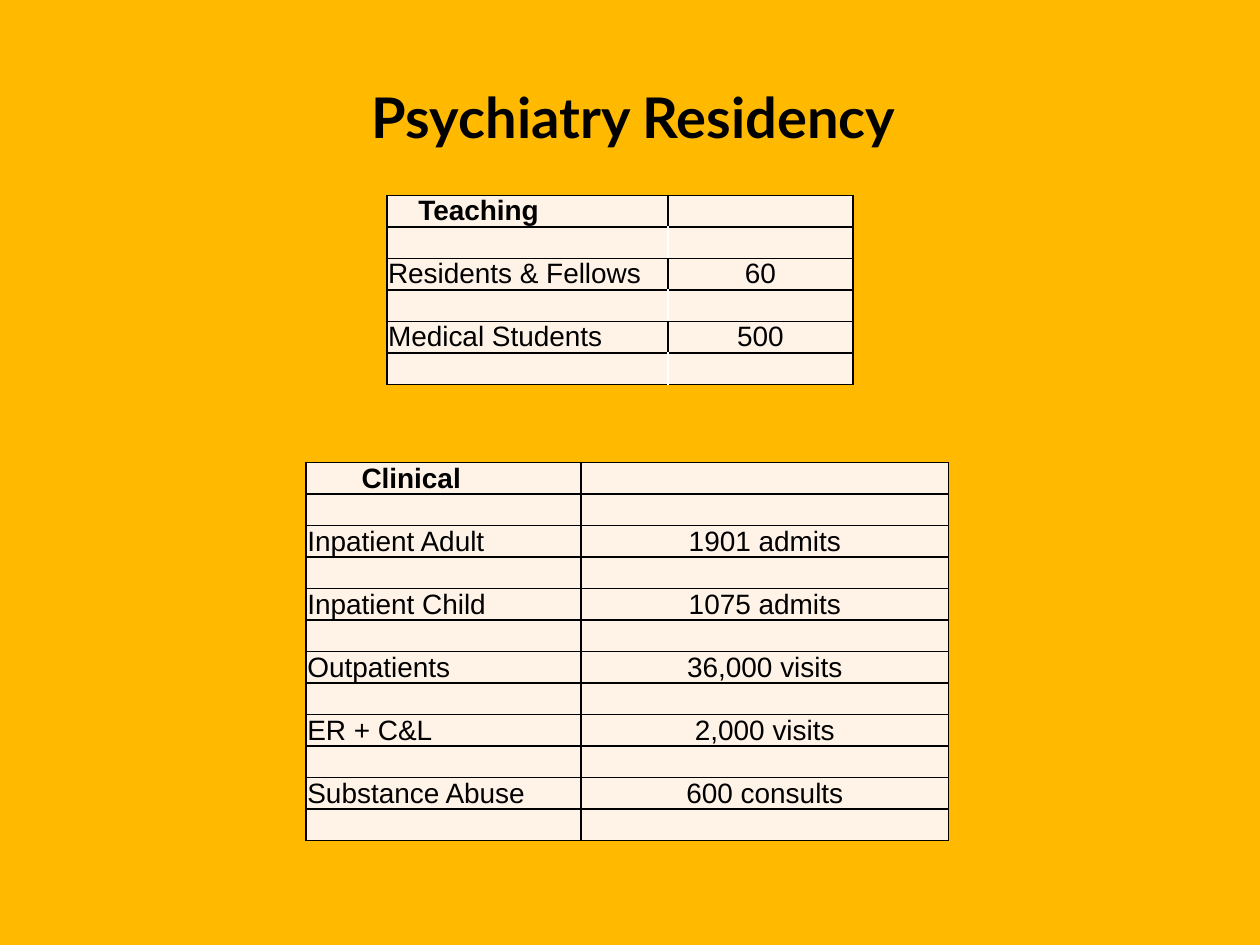
from lxml.etree import SubElement as Sub
from pptx import Presentation
from pptx.dml.color import RGBColor as RGB
from pptx.enum.text import MSO_ANCHOR as Anchor, PP_ALIGN as Align
from pptx.oxml.ns import qn
from pptx.util import Inches, Pt

GOLD = RGB(0xFF, 0xBA, 0x00)
CREAM = RGB(0xFF, 0xF3, 0xE7)
BLACK = RGB(0, 0, 0)
WHITE = RGB(0xFF, 0xFF, 0xFF)

TITLE = "Psychiatry Residency"
TABLES = [
    dict(head="Teaching", indent=0.25, at=(3.07, 1.55), cols=(2.23, 1.47), gap=WHITE,
         rows=[("Residents & Fellows", "60"), ("Medical Students", "500")]),
    dict(head="Clinical", indent=0.44, at=(2.43, 3.67), cols=(2.18, 2.92), gap=BLACK,
         rows=[("Inpatient Adult", "1901 admits"), ("Inpatient Child", "1075 admits"),
               ("Outpatients", "36,000 visits"), ("ER + C&L", "2,000 visits"),
               ("Substance Abuse", "600 consults")]),
]
ROW = 0.25
PAD = 0.01
HEAD = dict(name="Lato", size=Pt(32), bold=True)
BODY = dict(name="Arial", size=Pt(16), bold=False)


def style(font, look):
    for key, value in look.items():
        setattr(font, key, value)
    font.color.rgb = BLACK


def border(cell, hues):
    props = cell._tc.get_or_add_tcPr()
    for side, hue in zip("LRTB", hues):
        line = Sub(props, qn(f"a:ln{side}"), w=str(Pt(1)))
        fill = Sub(line, qn("a:solidFill"))
        Sub(fill, qn("a:srgbClr"), val=str(hue))


def write(cell, text, look, align):
    para = cell.text_frame.paragraphs[0]
    para.alignment = align
    if text:
        run = para.add_run()
        run.text = text
        style(run.font, look)
    else:
        para._p.get_or_add_endParaRPr().set("sz", "1400")


def draw(slide, data):
    pairs = [(data["head"], "")] + data["rows"]
    lines = [line for pair in pairs for line in (pair, ("", ""))]
    left, top = data["at"]
    frame = slide.shapes.add_table(
        len(lines), 2, Inches(left), Inches(top),
        Inches(sum(data["cols"])), Inches(ROW * len(lines)))
    table = frame.table
    table.first_row = table.horz_banding = False
    for col, width in zip(table.columns, data["cols"]):
        col.width = Inches(width)
    for r, line in enumerate(lines):
        table.rows[r].height = Inches(ROW)
        mid = data["gap"] if r % 2 else BLACK
        for c, text in enumerate(line):
            cell = table.cell(r, c)
            head = r == 0 and c == 0
            pads = dict(margin_left=Inches(data["indent"] if head else PAD),
                        margin_right=Inches(PAD), margin_top=0, margin_bottom=0,
                        vertical_anchor=Anchor.BOTTOM)
            for key, value in pads.items():
                setattr(cell, key, value)
            sides = (mid, BLACK) if c else (BLACK, mid)
            border(cell, sides + (BLACK, BLACK))
            cell.fill.solid()
            cell.fill.fore_color.rgb = CREAM
            write(cell, text, BODY | dict(bold=head), Align.CENTER if c else Align.LEFT)


def main():
    deck = Presentation()
    deck.slide_width, deck.slide_height = Inches(10), Inches(7.5)
    slide = deck.slides.add_slide(deck.slide_layouts[5])
    slide.background.fill.solid()
    slide.background.fill.fore_color.rgb = GOLD
    title = slide.shapes.title
    place = dict(left=2.43, top=0.29, width=5.2, height=0.9)
    for key, value in place.items():
        setattr(title, key, Inches(value))
    frame = title.text_frame
    setup = dict(text=TITLE, word_wrap=True, vertical_anchor=Anchor.BOTTOM,
                 margin_left=0, margin_right=0, margin_top=0, margin_bottom=0)
    for key, value in setup.items():
        setattr(frame, key, value)
    para = frame.paragraphs[0]
    para.alignment = Align.CENTER
    style(para.runs[0].font, HEAD)
    for data in TABLES:
        draw(slide, data)
    deck.save("out.pptx")


if __name__ == "__main__":
    main()
